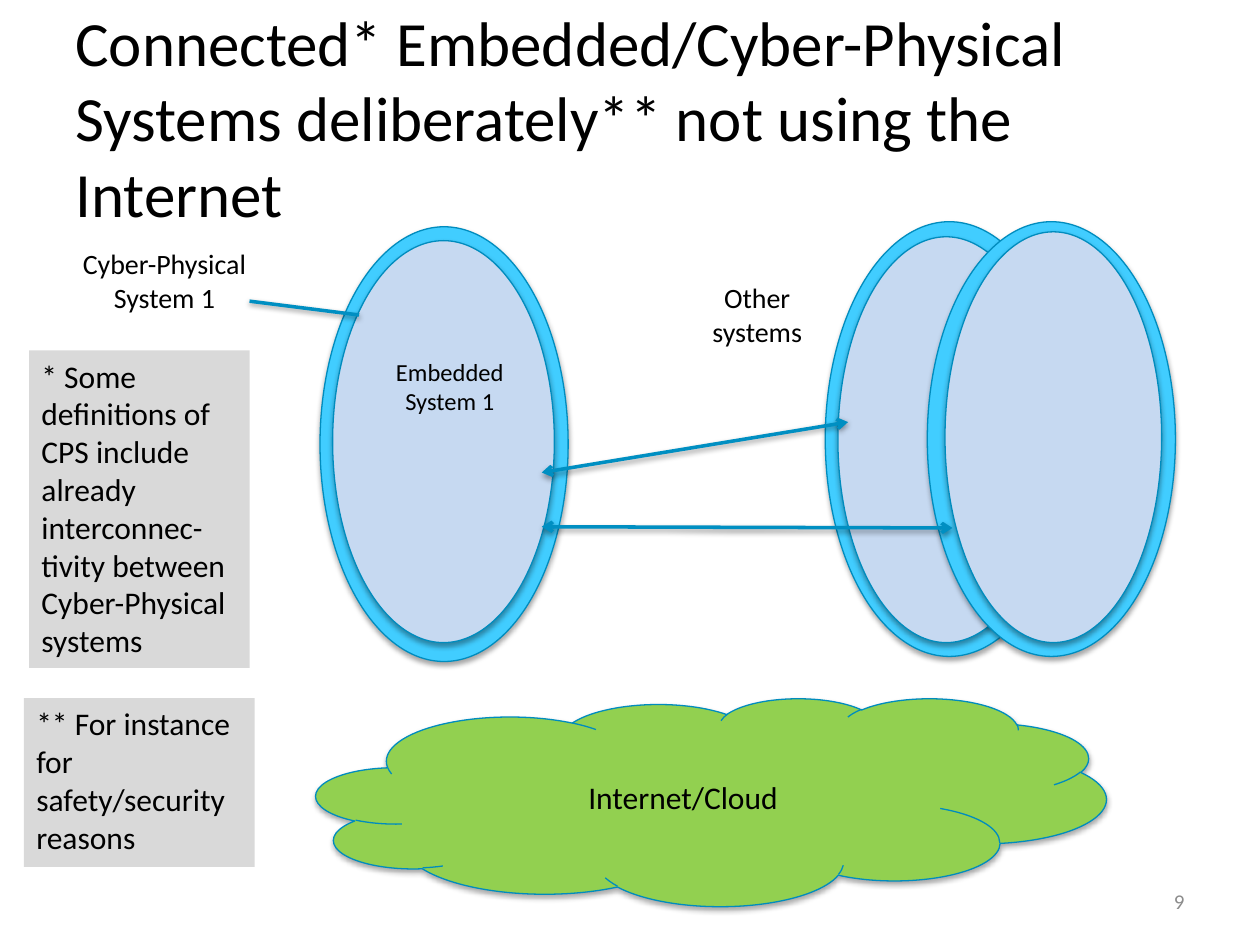
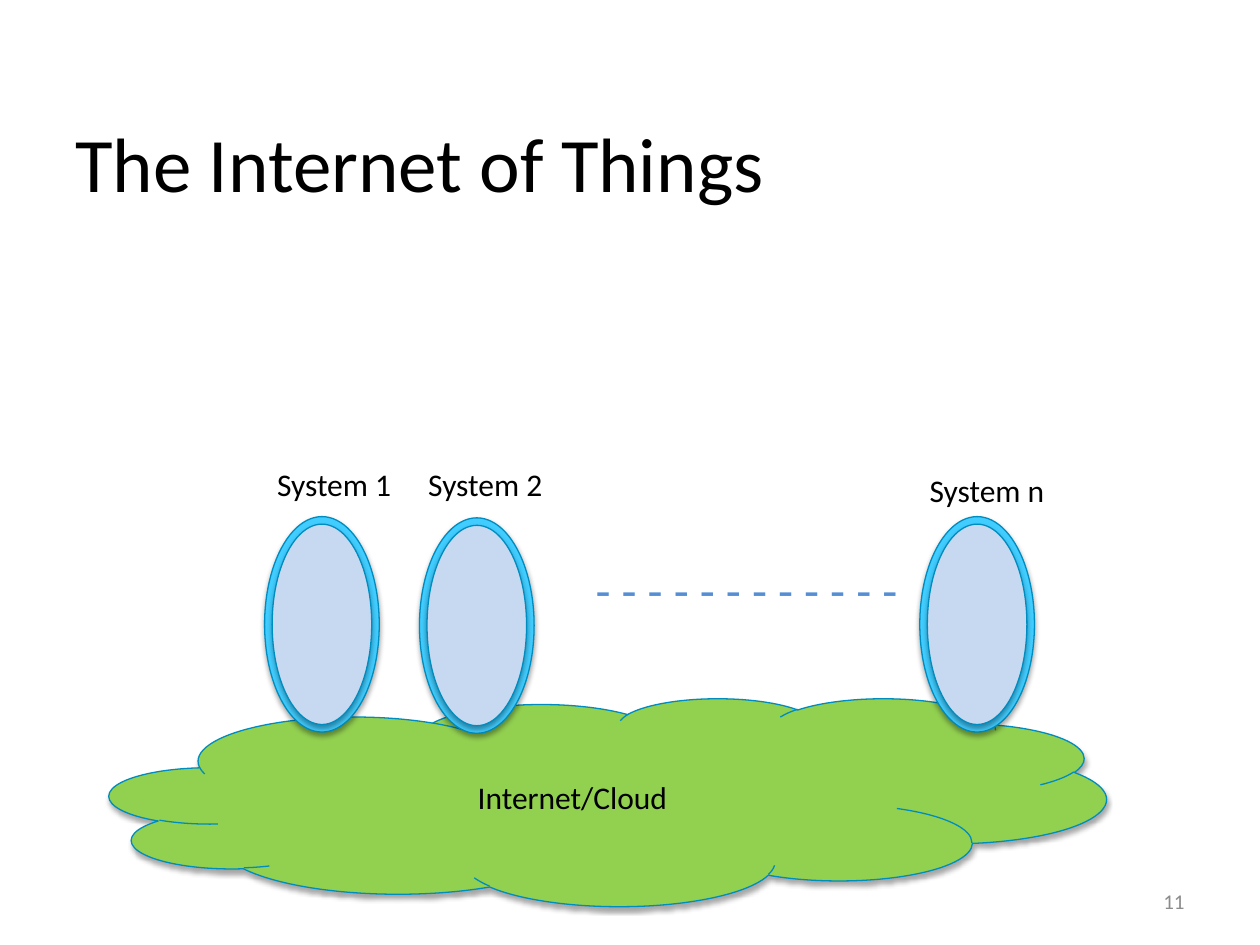
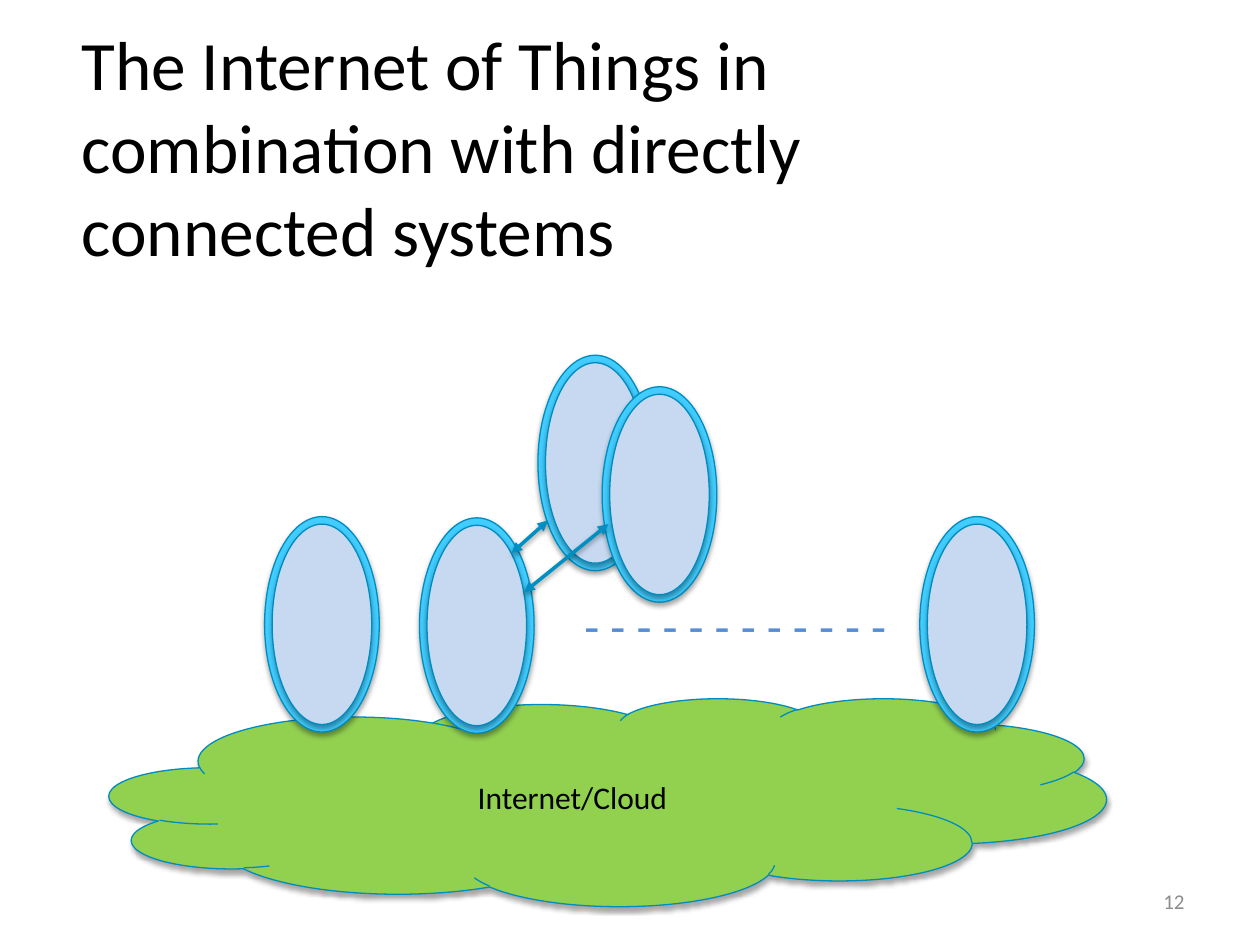
from dataclasses import dataclass

from lxml.etree import SubElement
from pptx import Presentation
from pptx.dml.color import RGBColor
from pptx.enum.shapes import MSO_CONNECTOR, MSO_SHAPE
from pptx.enum.text import MSO_ANCHOR, MSO_AUTO_SIZE, PP_ALIGN
from pptx.oxml.ns import qn
from pptx.util import Pt


@dataclass(frozen=True)
class Theme:
    font: str = "Calibri"
    ink: str = "000000"
    rim: str = "41CDFF"
    core: str = "C6D9F1"
    outline: str = "008CBE"
    link: str = "008FC2"
    cloud: str = "92D050"
    note: str = "D9D9D9"
    dashes: str = "558ED5"
    number: str = "8C8C8C"
    dash_size: float = 28
    body_size: float = 18
    label_size: float = 16
    small_size: float = 14
    number_size: float = 12
    outline_width: float = 0.75
    link_width: float = 2


@dataclass(frozen=True)
class Box:
    left: float
    top: float
    width: float
    height: float

    def inside(self, left, top, width, height):
        """Return a box whose corner is measured from this one's."""
        return Box(self.left + left, self.top + top, width, height)

    def lengths(self):
        return Pt(self.left), Pt(self.top), Pt(self.width), Pt(self.height)


THEME = Theme()
NUMBER_BOX = Box(516.2, 500.4, 167.8, 28.8)
CLOUD_SCENE = Box(62.6, 295.2, 569.5, 222.5)
SMALL_SYSTEM = (65.5, 123.1)
SMALL_RIM = (4.3, 4.3, 4.3, 4.3)


def color(value):
    return RGBColor.from_string(value)


def write(frame, paragraphs, size, ink=THEME.ink, align=PP_ALIGN.LEFT):
    """Fill a text frame; a newline inside a paragraph is a line break."""
    for index, text in enumerate(paragraphs):
        para = frame.add_paragraph() if index else frame.paragraphs[0]
        para.alignment = align
        for number, line in enumerate(text.split("\n")):
            if number:
                para.add_line_break()
            span = para.add_run()
            span.text = line
            span.font.name = THEME.font
            span.font.size = Pt(size)
            span.font.color.rgb = color(ink)


def add_text(page, box, paragraphs, size, ink=THEME.ink, align=PP_ALIGN.LEFT,
             wrap=True, anchor=MSO_ANCHOR.TOP, grow=True):
    text_box = page.shapes.add_textbox(*box.lengths())
    frame = text_box.text_frame
    frame.word_wrap = wrap
    frame.vertical_anchor = anchor
    frame.auto_size = MSO_AUTO_SIZE.SHAPE_TO_FIT_TEXT if grow else MSO_AUTO_SIZE.NONE
    write(frame, paragraphs, size, ink, align)
    return text_box


def cast_shadow(shape, distance, opacity):
    effects = SubElement(shape.element.spPr, qn("a:effectLst"))
    shadow = SubElement(effects, qn("a:outerShdw"), blurRad=str(Pt(3.1)),
                        dist=str(Pt(distance)), dir="5400000", rotWithShape="0")
    black = SubElement(shadow, qn("a:srgbClr"), val="000000")
    SubElement(black, qn("a:alpha"), val=str(opacity * 1000))


def add_outlined(shapes, kind, box, fill):
    shape = shapes.add_shape(kind, *box.lengths())
    shape.fill.solid()
    shape.fill.fore_color.rgb = color(fill)
    shape.line.color.rgb = color(THEME.outline)
    shape.line.width = Pt(THEME.outline_width)
    cast_shadow(shape, 1.8, 35)
    return shape


def add_system(page, box, rim=SMALL_RIM):
    """Draw an ellipse in an ellipse; rim is left, top, right, bottom."""
    left, top, right, bottom = rim
    core = box.inside(left, top, box.width - left - right, box.height - top - bottom)
    group = page.shapes.add_group_shape()
    add_outlined(group.shapes, MSO_SHAPE.OVAL, box, THEME.rim)
    add_outlined(group.shapes, MSO_SHAPE.OVAL, core, THEME.core)


def add_cloud(page, box):
    cloud = add_outlined(page.shapes, MSO_SHAPE.CLOUD, box, THEME.cloud)
    cloud.text_frame.word_wrap = True
    cloud.text_frame.vertical_anchor = MSO_ANCHOR.MIDDLE
    write(cloud.text_frame, ["Internet/Cloud"], THEME.body_size, align=PP_ALIGN.CENTER)


def add_link(page, area, start, end, arrow=None):
    """Draw a line between two points of area, with arrowheads if named."""
    link = page.shapes.add_connector(
        MSO_CONNECTOR.STRAIGHT,
        Pt(area.left + start[0]), Pt(area.top + start[1]),
        Pt(area.left + end[0]), Pt(area.top + end[1]))
    link.line.color.rgb = color(THEME.link)
    link.line.width = Pt(THEME.link_width)
    if arrow:
        outline = link.element.spPr.find(qn("a:ln"))
        for tag in ("a:headEnd", "a:tailEnd"):
            SubElement(outline, qn(tag), type=arrow)
    cast_shadow(link, 1.6, 38)


def add_page(deck, title, title_box, title_size, number):
    page = deck.slides.add_slide(deck.slide_layouts[6])
    add_text(page, title_box, [title], title_size, anchor=MSO_ANCHOR.MIDDLE, grow=False)
    add_text(page, NUMBER_BOX, [str(number)], THEME.number_size, THEME.number,
             PP_ALIGN.RIGHT, anchor=MSO_ANCHOR.MIDDLE, grow=False)
    return page


def add_notes_column(page, area):
    notes = [
        (area.inside(2.9, 0, 126, 181.4),
         "* Some definitions of CPS include already interconnec-tivity "
         "between Cyber-Physical systems"),
        (area.inside(0, 198.7, 131.8, 96.5),
         "** For instance for safety/security reasons"),
    ]
    for box, text in notes:
        note = add_text(page, box, [text], THEME.body_size)
        note.fill.solid()
        note.fill.fore_color.rgb = color(THEME.note)


def add_direct_links(page, area):
    """Draw one labelled system linked straight to two others, over a cloud."""
    systems = [
        (144, 2.9, (7.2, 7.9, 7.9, 10.8)),
        (432.7, 0, (7.2, 8.6, 10.8, 7.9)),
        (491, 0, (10.1, 5.8, 7.9, 7.9)),
    ]
    for left, top, rim in systems:
        add_system(page, area.inside(left, top, 141.8, 248.4), rim)
    add_cloud(page, area.inside(141.8, 272.2, 451.4, 118.8))

    labels = [
        (area.inside(180, 73.5, 76.3, 41), ["Embedded\nSystem 1"], THEME.small_size, False),
        (area.inside(0, 10.8, 110.2, 46.1), ["Cyber-Physical", "System 1"],
         THEME.label_size, False),
        (area.inside(354.9, 30.3, 77.8, 46.1), ["Other systems"], THEME.label_size, True),
    ]
    for box, lines, size, wrap in labels:
        add_text(page, box, lines, size, align=PP_ALIGN.CENTER, wrap=wrap)

    add_link(page, area, (103.7, 45.4), (166.3, 53.3))
    add_link(page, area, (270.7, 143.3), (445.7, 114.5), "arrow")
    add_link(page, area, (270.7, 174.3), (505.4, 175), "arrow")


def add_cloud_scene(page, area, dash_left, dash_top):
    """Draw the row of systems standing on the cloud."""
    add_cloud(page, area.inside(0, 103.7, 569.5, 118.8))
    for left, top in ((88.6, 0), (177.1, 0.7), (463, 0)):
        add_system(page, area.inside(left, top, *SMALL_SYSTEM))
    add_text(page, area.inside(dash_left, dash_top, 194.4, 41),
             ["- - - - - - - - - - - -"], THEME.dash_size, THEME.dashes)


def add_system_labels(page, area):
    for name, left, top in (("1", 88.6, -33.1), ("2", 175, -33.1), ("n", 461.5, -29.5)):
        add_text(page, area.inside(left, top, 80.6, 28.8), [f"System {name}"],
                 THEME.body_size, wrap=False)


def add_linked_pair(page, area):
    """Add two systems above the row, linked to its second system."""
    for left, top in ((244.8, -92.2), (281.5, -74.2)):
        add_system(page, area.inside(left, top, *SMALL_SYSTEM))
    add_link(page, area, (229.7, 20.9), (250.6, 2.2), "triangle")
    add_link(page, area, (236.9, 43.2), (285.1, 4.3), "triangle")


def main():
    deck = Presentation()
    deck.slide_width, deck.slide_height = Pt(720), Pt(540)

    page = add_page(
        deck,
        "Connected* Embedded/Cyber-Physical Systems deliberately** not using the Internet",
        Box(36, 21.6, 659.5, 90), 36, 9)
    add_direct_links(page, Box(38.9, 126.7, 632.9, 391))
    add_notes_column(page, Box(13.7, 200.2, 131.8, 295.2))

    page = add_page(deck, "The Internet of Things", Box(36, 47.5, 648, 90), 44, 11)
    add_cloud_scene(page, CLOUD_SCENE, 270.7, 20.9)
    add_system_labels(page, CLOUD_SCENE)

    page = add_page(
        deck, "The Internet of Things in combination with directly connected systems",
        Box(39.6, 38.2, 568.1, 90), 39.6, 12)
    add_cloud_scene(page, CLOUD_SCENE, 264.3, 41.8)
    add_linked_pair(page, CLOUD_SCENE)

    deck.save("out.pptx")


if __name__ == "__main__":
    main()
